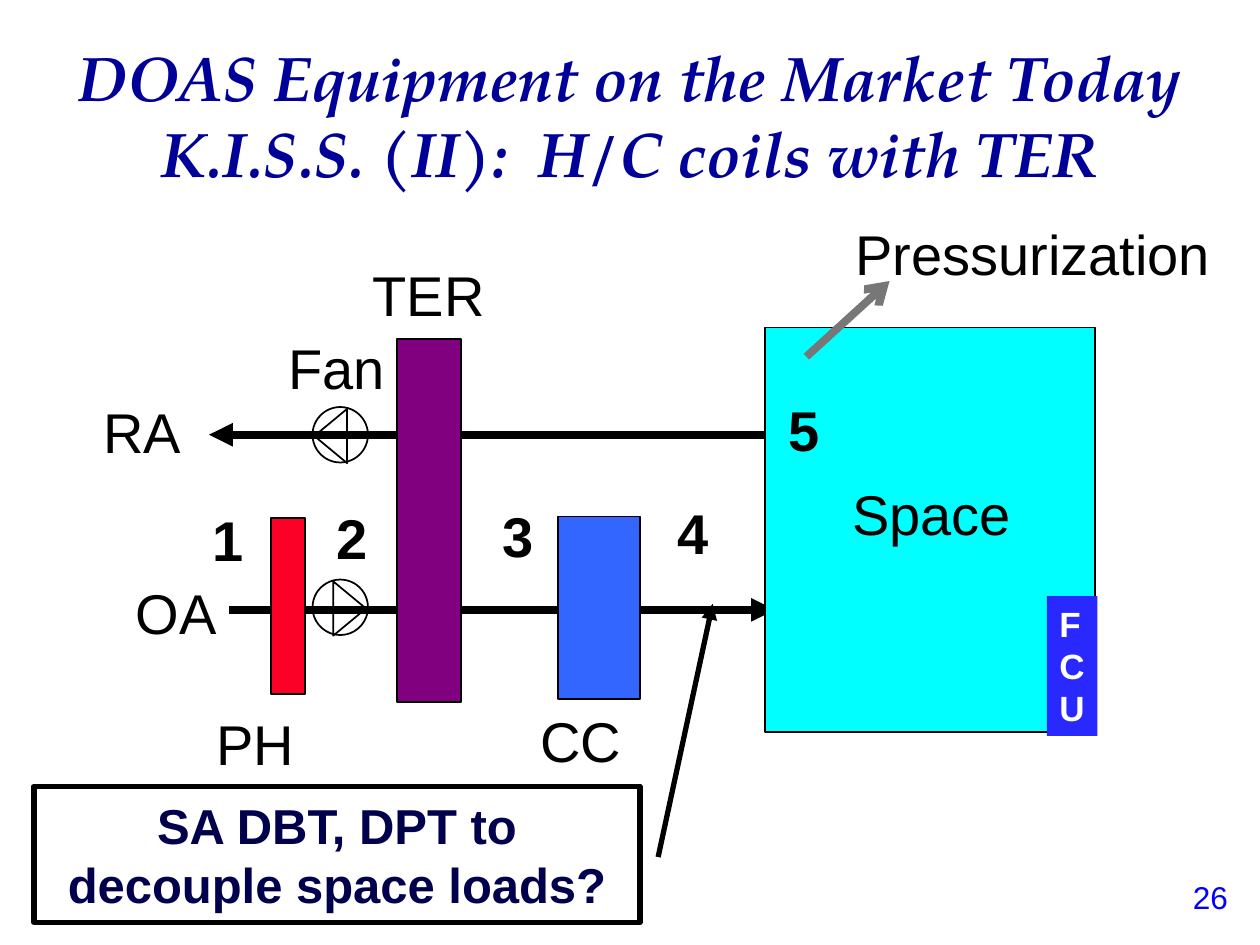
from pptx import Presentation
from pptx.dml.color import RGBColor
from pptx.enum.shapes import MSO_CONNECTOR, MSO_SHAPE
from pptx.enum.text import MSO_ANCHOR, PP_ALIGN
from pptx.oxml.ns import qn
from pptx.util import Pt
from lxml import etree

RECT, OVAL = MSO_SHAPE.RECTANGLE, MSO_SHAPE.OVAL
TRIANGLE, CALLOUT = MSO_SHAPE.ISOSCELES_TRIANGLE, MSO_SHAPE.LINE_CALLOUT_1
STRAIGHT = MSO_CONNECTOR.STRAIGHT
LEFT, CENTER = PP_ALIGN.LEFT, PP_ALIGN.CENTER
TOP, MIDDLE = MSO_ANCHOR.TOP, MSO_ANCHOR.MIDDLE

COLORS = {
    "title": "000099", "black": "000000", "white": "FFFFFF", "number": "0000FF",
    "recovery": "800080", "preheat": "FC0128", "cooling": "3366FF",
    "space": "00FFFF", "fcu": "2929FF", "callout": "00004C", "gray": "777777",
}
RGB = {name: RGBColor.from_string(value) for name, value in COLORS.items()}


def write(sp, text, size, color="black", align=LEFT, anchor=TOP, name="Arial", **style):
    tf = sp.text_frame
    tf.word_wrap = True
    tf.vertical_anchor = anchor
    p = tf.paragraphs[0]
    p.text = text
    p.alignment = align
    p.font.color.rgb = RGB[color]
    for key, value in {"name": name, "size": Pt(size), **style}.items():
        setattr(p.font, key, value)


def draw(kind, x, y, w, h, fill=None, line="black", width=1):
    sp = s.shapes.add_shape(kind, Pt(x), Pt(y), Pt(w), Pt(h))
    sp.shadow.inherit = False
    for part, color in ((sp.fill, fill), (sp.line.fill, line)):
        if color:
            part.solid()
            part.fore_color.rgb = RGB[color]
        else:
            part.background()
    if line:
        sp.line.width = Pt(width)
    return sp


prs = Presentation()
prs.slide_width, prs.slide_height = Pt(720), Pt(540)
s = prs.slides.add_slide(prs.slide_layouts[5])

title = s.shapes.title
title.left, title.top, title.width, title.height = Pt(0), Pt(21.6), Pt(720), Pt(87.8)
write(title, "DOAS Equipment on the Market Today\vK.I.S.S. (II):  H/C coils with TER", 36,
      "title", CENTER, MIDDLE, "TeX Gyre Pagella", bold=True, italic=True)

# Air streams, drawn beneath the equipment, and the pressurization arrow
arrows = []
for x1, y1, x2, y2, color, head in (
    (441.4, 248.4, 119.5, 248.4, "black", "triangle"),
    (131, 348.5, 442.8, 348.5, "black", "triangle"),
    (460.8, 203.8, 508.3, 160.6, "gray", "arrow"),
):
    c = s.shapes.add_connector(STRAIGHT, Pt(x1), Pt(y1), Pt(x2), Pt(y2))
    c.line.color.rgb = RGB[color]
    c.line.width = Pt(4.5)
    etree.SubElement(c.line._get_or_add_ln(), qn("a:tailEnd"), type=head)
    etree.SubElement(c._element.spPr, qn("a:effectLst"))
    arrows.append(c)

for x, y, w, h, fill in (
    (226.8, 193.7, 36.7, 207.4, "recovery"),
    (154.8, 295.9, 19.4, 100.8, "preheat"),
    (319, 295.2, 46.8, 104.4, "cooling"),
    (437, 187.2, 188.6, 231.1, "space"),
):
    draw(RECT, x, y, w, h, fill)
s.shapes._spTree.append(arrows[-1]._element)

# Fans: a circle around a triangle that points along the flow
for top, triangle_x, triangle_y, rotation in (
    (331.2, 184.3, 338.4, 90), (232.6, 173.5, 239.8, 270),
):
    draw(TRIANGLE, triangle_x, triangle_y, 31, 18.7).rotation = rotation
    draw(OVAL, 178.6, top, 31.7, 31.7)

for text, x, y, w, bold in (
    ("OA", 70.6, 326.9, 61.2, False),
    ("TER", 205.9, 145.4, 97.2, False),
    ("RA", 51.8, 223.9, 66.2, False),
    ("Fan", 157.7, 187.2, 80.6, False),
    ("PH", 116.6, 401.8, 103.7, False),
    ("CC", 301.7, 400.3, 109.4, False),
    ("Pressurization", 481.7, 121.7, 222.5, False),
    ("1", 114.5, 285.1, 32.4, True),
    ("2", 185, 284.4, 34.6, True),
    ("3", 280.1, 283, 39.6, True),
    ("4", 380.2, 281.5, 38.9, True),
    ("5", 443.5, 222.5, 38.2, True),
):
    box = s.shapes.add_textbox(Pt(x), Pt(y), Pt(w), Pt(46.1))
    write(box, text, 32, bold=bold)

space = draw(RECT, 439.9, 270.7, 185, 46.1, "space", None)
write(space, "Space", 32, align=CENTER)

fcu = draw(RECT, 598.3, 340.6, 28.8, 79.9, "fcu", None)
write(fcu, "FCU", 20, "white", bold=True)

callout = draw(CALLOUT, 19.4, 449.3, 346.3, 77.8, width=3)
for i, value in enumerate((0.52, 1.03, -1.34, 1.12)):
    callout.adjustments[i] = value
etree.SubElement(callout.line._get_or_add_ln(), qn("a:tailEnd"), type="triangle")
write(callout, "SA DBT, DPT to decouple space loads?", 28, "callout", CENTER, MIDDLE, bold=True)

number = s.shapes.add_textbox(Pt(674.6), Pt(498.2), Pt(45.4), Pt(28.8))
write(number, "26", 18, "number")

prs.save("out.pptx")
